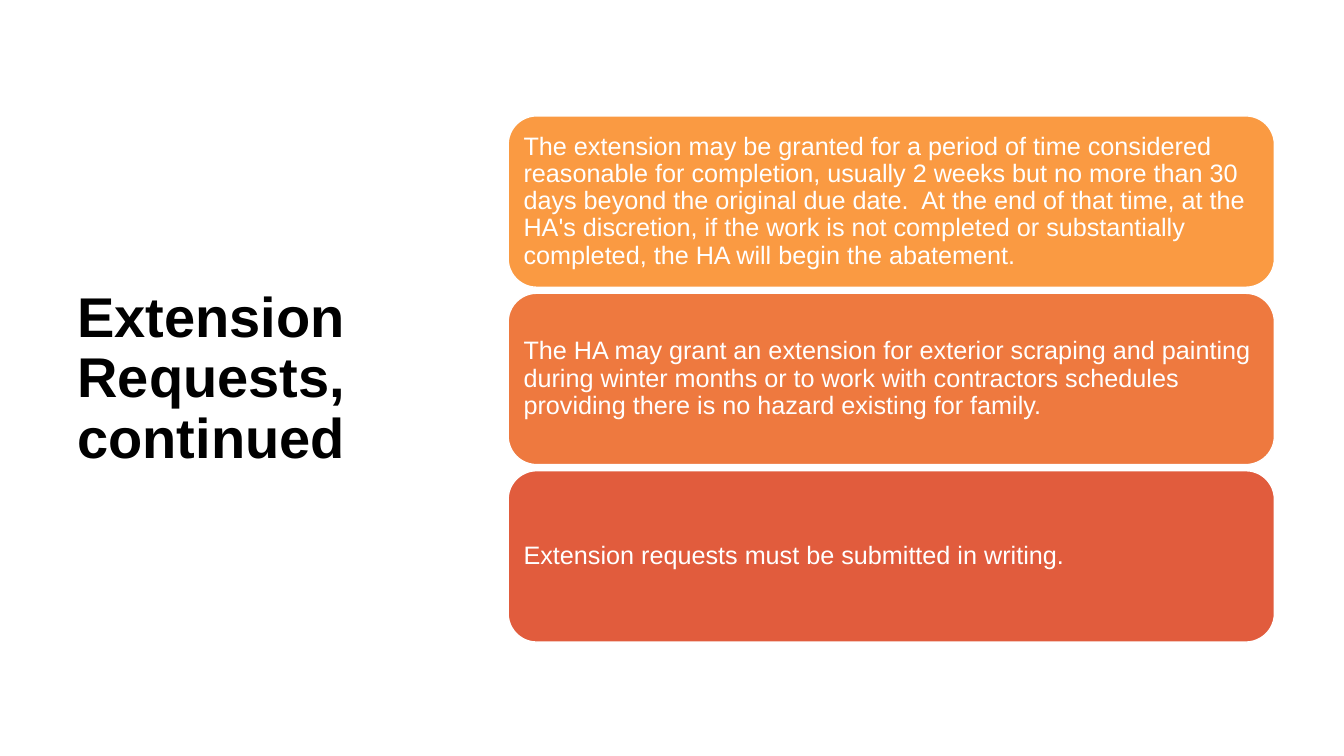
from dataclasses import dataclass

from pptx import Presentation
from pptx.dml.color import RGBColor
from pptx.enum.shapes import MSO_SHAPE as Preset
from pptx.enum.text import MSO_ANCHOR as Anchor, PP_ALIGN as Align
from pptx.shapes.autoshape import Shape
from pptx.slide import Slide
from pptx.util import Emu, Pt

PX = 9144
COLOURS = {
    "title": "000000",
    "white": "FFFFFF",
    "amber": "FA9A42",
    "orange": "EE793F",
    "red": "E15C3D",
}
CARD_LEFT, CARD_TOP, CARD_WIDTH, CARD_HEIGHT = 504, 115, 760, 170
CARD_PITCH = 176


@dataclass(frozen=True)
class Card:
    text: str
    colour: str


CARDS = [
    Card(
        "The extension may be granted for a period of time considered reasonable "
        "for completion, usually 2 weeks but no more than 30 days beyond the "
        "original due date.  At the end of that time, at the HA's discretion, if "
        "the work is not completed or substantially completed, the HA will begin "
        "the abatement.",
        "amber",
    ),
    Card(
        "The HA may grant an extension for exterior scraping and painting during "
        "winter months or to work with contractors schedules providing there is "
        "no hazard existing for family.",
        "orange",
    ),
    Card("Extension requests must be submitted in writing.", "red"),
]


def px(length: int) -> Emu:
    return Emu(length * PX)


def colour(name: str) -> RGBColor:
    return RGBColor.from_string(COLOURS[name])


def apply(target: object, values: dict) -> None:
    for name, value in values.items():
        setattr(target, name, value)


def write(box: Shape, text: str, size: int, ink: str, bold: bool, inset: int) -> None:
    frame = box.text_frame
    apply(frame, {"word_wrap": True, "vertical_anchor": Anchor.MIDDLE})
    apply(frame, {f"margin_{side}": px(inset) for side in ("left", "top", "right", "bottom")})
    para = frame.paragraphs[0]
    apply(para, {"alignment": Align.LEFT, "line_spacing": 0.9})
    span = para.add_run()
    span.text = text
    apply(span.font, {"name": "Arial", "size": Pt(size), "bold": bold})
    span.font.color.rgb = colour(ink)


def add_title(page: Slide) -> None:
    box = page.shapes.add_textbox(px(67), px(60), px(382), px(633))
    write(box, "Extension Requests, continued", 40, "title", True, 10)


def add_card(page: Slide, card: Card, top: int) -> None:
    box = page.shapes.add_shape(
        Preset.ROUNDED_RECTANGLE, px(CARD_LEFT), px(top), px(CARD_WIDTH), px(CARD_HEIGHT)
    )
    box.shadow.inherit = False
    box.fill.solid()
    box.fill.fore_color.rgb = colour(card.colour)
    box.line.color.rgb = colour("white")
    box.line.width = Pt(1)
    write(box, card.text, 18, "white", False, 7)


def main() -> None:
    deck = Presentation()
    apply(deck, {"slide_width": px(1333), "slide_height": px(750)})
    page = deck.slides.add_slide(deck.slide_layouts[6])
    add_title(page)
    for index, card in enumerate(CARDS):
        add_card(page, card, CARD_TOP + index * CARD_PITCH)
    deck.save("out.pptx")


if __name__ == "__main__":
    main()
